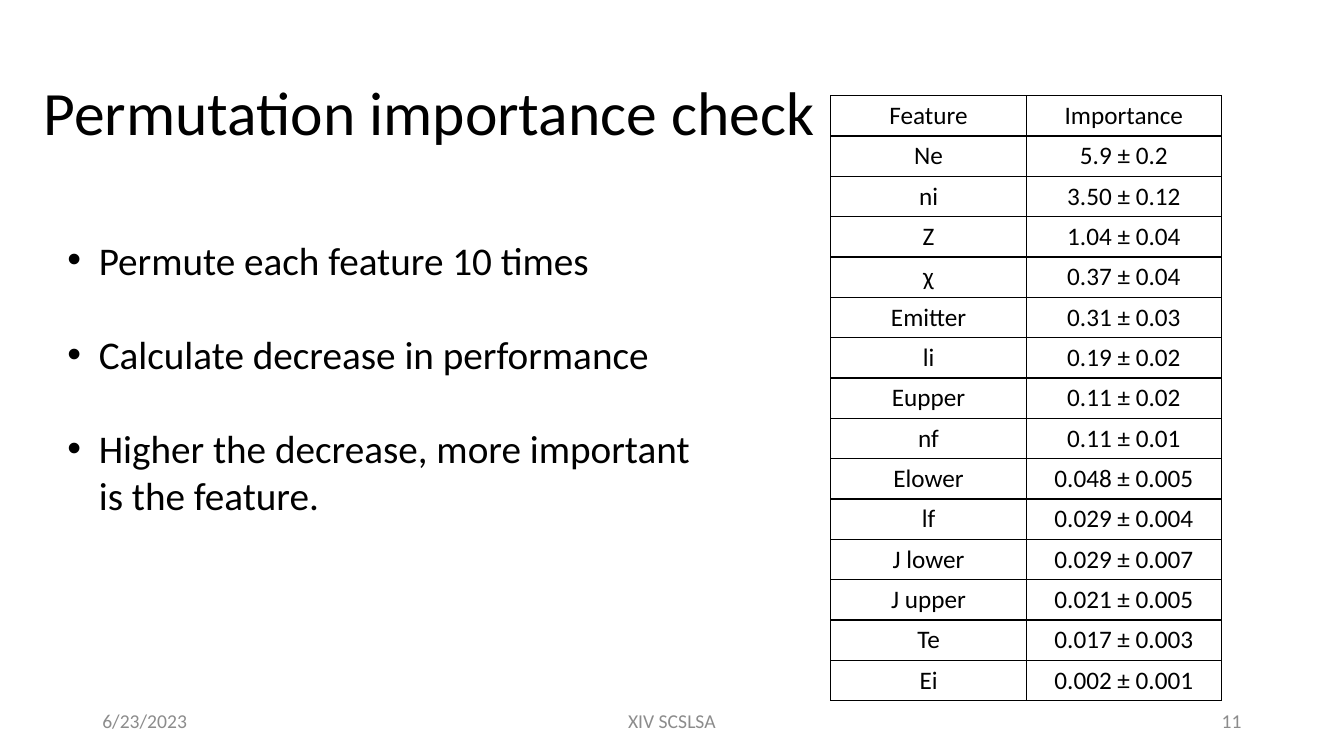
from pptx import Presentation
from pptx.dml.color import RGBColor
from pptx.enum import text as t
from pptx.oxml import parse_xml
from pptx.oxml.ns import nsdecls
from pptx.util import Pt

FONT = "Calibri"
COLORS = {"ink": "000000", "muted": "8C8C8C"}
LEFT, CENTER, RIGHT = t.PP_ALIGN.LEFT, t.PP_ALIGN.CENTER, t.PP_ALIGN.RIGHT
MIDDLE = t.MSO_ANCHOR.MIDDLE

STEPS = [
    "Permute each feature 10 times",
    "Calculate decrease in performance",
    "Higher the decrease, more important is the feature.",
]
ROWS = [
    ("Feature", "Importance"),
    ("Ne", "5.9 ± 0.2"),
    ("ni", "3.50 ± 0.12"),
    ("Z", "1.04 ± 0.04"),
    ("χ", "0.37 ± 0.04"),
    ("Emitter", "0.31 ± 0.03"),
    ("li", "0.19 ± 0.02"),
    ("Eupper", "0.11 ± 0.02"),
    ("nf", "0.11 ± 0.01"),
    ("Elower", "0.048 ± 0.005"),
    ("lf", "0.029 ± 0.004"),
    ("J lower", "0.029 ± 0.007"),
    ("J upper", "0.021 ± 0.005"),
    ("Te", "0.017 ± 0.003"),
    ("Ei", "0.002 ± 0.001"),
]


def style(para, size, color="ink", align=LEFT):
    para.alignment = align
    for run in para.runs:
        run.font.name = FONT
        run.font.size = Pt(size)
        run.font.color.rgb = RGBColor.from_string(COLORS[color])


def add_text(slide, box, words, size, color="ink", align=LEFT, anchor=MIDDLE):
    frame = slide.shapes.add_textbox(*map(Pt, box)).text_frame
    frame.word_wrap = True
    frame.vertical_anchor = anchor
    frame.text = words
    for para in frame.paragraphs:
        style(para, size, color, align)
    return frame


def add_list(slide, box, items, size, indent, gap):
    frame = add_text(slide, box, "\n".join(items), size, anchor=t.MSO_ANCHOR.TOP)
    for para in frame.paragraphs:
        props = para._p.get_or_add_pPr()
        props.set("marL", str(Pt(indent)))
        props.set("indent", str(-Pt(indent)))
        props.append(parse_xml(f'<a:buFont {nsdecls("a")} typeface="Arial"/>'))
        props.append(parse_xml(f'<a:buChar {nsdecls("a")} char="•"/>'))
    for para in frame.paragraphs[:-1]:
        para.space_after = Pt(gap)


def add_border(cell, width):
    props = cell._tc.get_or_add_tcPr()
    for spot, side in enumerate(("lnL", "lnR", "lnT", "lnB")):
        props.insert(spot, parse_xml(
            f'<a:{side} {nsdecls("a")} w="{Pt(width)}"><a:solidFill>'
            f'<a:srgbClr val="{COLORS["ink"]}"/></a:solidFill></a:{side}>'))


def add_grid(slide, left, top, widths, height, rows, size):
    shape = slide.shapes.add_table(
        len(rows), len(widths), Pt(left), Pt(top),
        Pt(sum(widths)), Pt(height * len(rows)))
    table = shape.table
    table.first_row = table.horz_banding = False
    for col, width in zip(table.columns, widths):
        col.width = Pt(width)
    for row, values in zip(table.rows, rows):
        row.height = Pt(height)
        for cell, value in zip(row.cells, values):
            cell.text = value
            cell.vertical_anchor = MIDDLE
            cell.margin_top = cell.margin_bottom = 0
            cell.fill.background()
            style(cell.text_frame.paragraphs[0], size, align=CENTER)
            add_border(cell, 1)


def main():
    deck = Presentation()
    deck.slide_width, deck.slide_height = Pt(960), Pt(540)
    slide = deck.slides.add_slide(deck.slide_layouts[6])

    title = add_text(slide, (24, 30, 828, 104.4),
                     "Permutation importance check", 44)
    title.paragraphs[0].line_spacing = 0.9

    footer = [
        (66, 216, "6/23/2023", LEFT),
        (318, 324, "XIV SCSLSA", CENTER),
        (678, 216, "11", RIGHT),
    ]
    for left, width, words, align in footer:
        add_text(slide, (left, 500.4, width, 28.8), words, 14, "muted", align)

    add_list(slide, (41, 165, 482, 211), STEPS, 28, indent=22.5, gap=33.6)
    add_grid(slide, 593.3, 68.4, (140, 139), 28.8, ROWS, 18)

    deck.save("out.pptx")


if __name__ == "__main__":
    main()
